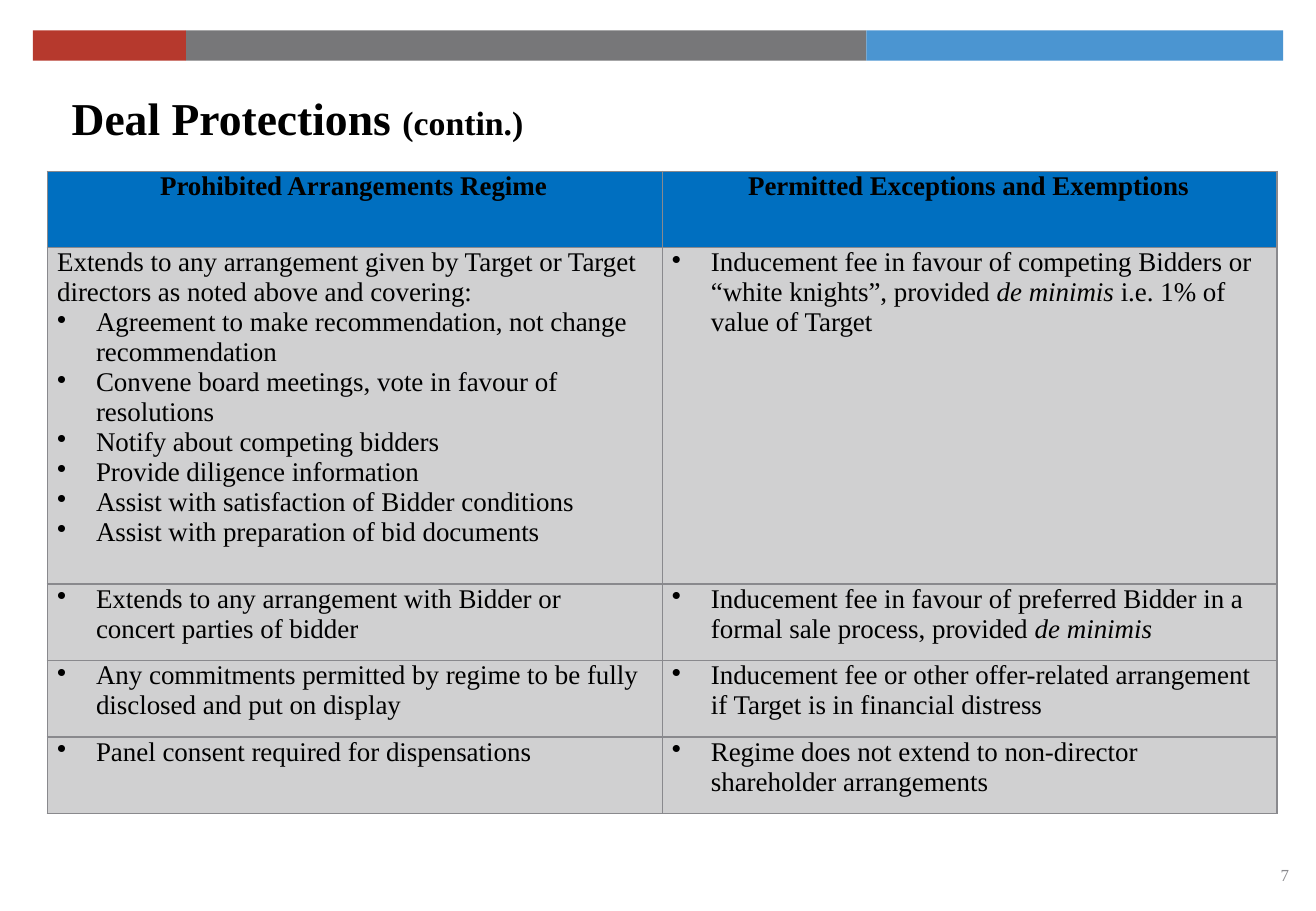
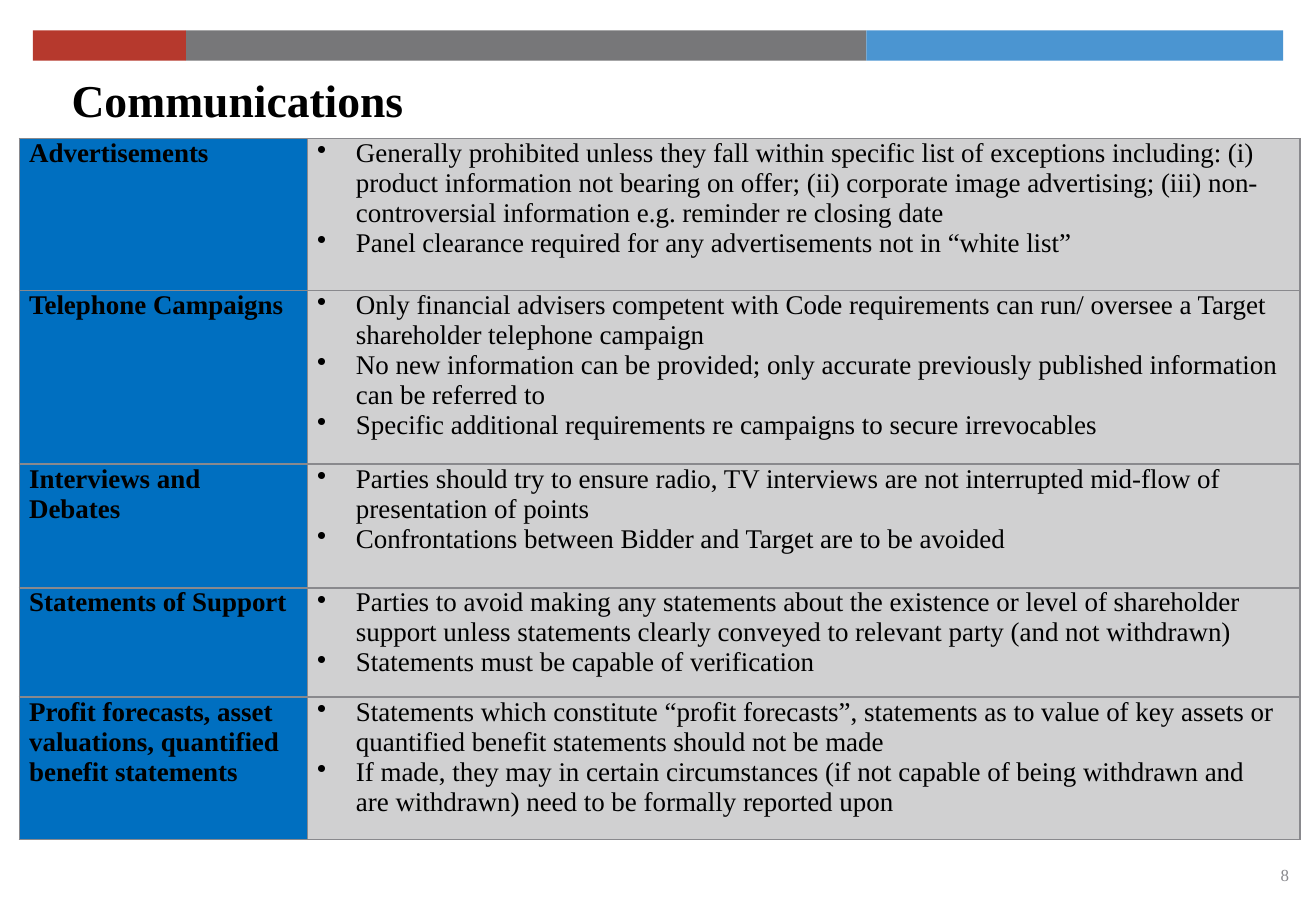
"""Two slides on takeover rules: deal protections and communications."""
from dataclasses import dataclass

from lxml.etree import SubElement
from pptx import Presentation
from pptx.dml.color import RGBColor
from pptx.enum.shapes import MSO_SHAPE
from pptx.enum.text import PP_ALIGN
from pptx.oxml.ns import qn
from pptx.util import Inches, Pt


@dataclass(frozen=True)
class Theme:
    font: str = "Times New Roman"
    ink: str = "000000"
    red: str = "B6392D"
    grey: str = "777779"
    sky: str = "4B95D1"
    heading_fill: str = "006FC0"
    body_fill: str = "D0D0D1"
    muted: str = "89898D"
    title_size: int = 27
    suffix_size: int = 20
    table_size: int = 16
    number_size: int = 10
    border_width: int = 1


THEME = Theme()
BANDS = [(1.53, 5.6, THEME.grey), (7.13, 3.43, THEME.sky), (0.27, 1.26, THEME.red)]
TITLE_TEXT_LEFT = 0.59
BULLET = "• "

SLIDES = [
    {
        "number": 7,
        "title": [("Deal Protections ", THEME.title_size), ("(contin.)", THEME.suffix_size)],
        "title_box": (0.48, 0.74, 9.88),
        "table_at": (0.39, 1.41),
        "columns": [5.06, 5.06],
        "heights": [0.63, 2.77, 0.63, 0.63, 0.63],
        "heading_row": True,
        "rows": [
            (["Prohibited Arrangements Regime"], ["Permitted Exceptions and Exemptions"]),
            (
                [
                    "Extends to any arrangement given by Target or Target directors as noted above and covering:",
                    "• Agreement to make recommendation, not change recommendation",
                    "• Convene board meetings, vote in favour of resolutions",
                    "• Notify about competing bidders",
                    "• Provide diligence information",
                    "• Assist with satisfaction of Bidder conditions",
                    "• Assist with preparation of bid documents",
                ],
                ["• Inducement fee in favour of competing Bidders or “white knights”, "
                 "provided *de minimis* i.e. 1% of value of Target"],
            ),
            (
                ["• Extends to any arrangement with Bidder or concert parties of bidder"],
                ["• Inducement fee in favour of preferred Bidder in a formal sale process, "
                 "provided *de minimis*"],
            ),
            (
                ["• Any commitments permitted by regime to be fully disclosed and put on display"],
                ["• Inducement fee or other offer-related arrangement if Target is in financial distress"],
            ),
            (
                ["• Panel consent required for dispensations"],
                ["• Regime does not extend to non-director shareholder arrangements"],
            ),
        ],
    },
    {
        "number": 8,
        "title": [("Communications", THEME.title_size)],
        "title_box": (0.58, 0.59, 2.76),
        "table_at": (0.16, 1.14),
        "columns": [2.37, 8.17],
        "heights": [1.25, 1.43, 1.02, 0.9, 1.17],
        "heading_row": False,
        "rows": [
            (
                ["Advertisements"],
                [
                    "• Generally prohibited unless they fall within specific list of exceptions including: "
                    "(i) product information not bearing on offer; (ii) corporate image advertising; "
                    "(iii) non-controversial information e.g. reminder re closing date",
                    "• Panel clearance required for any advertisements not in “white list”",
                ],
            ),
            (
                ["Telephone Campaigns"],
                [
                    "• Only financial advisers competent with Code requirements can run/ oversee "
                    "a Target shareholder telephone campaign",
                    "• No new information can be provided; only accurate previously published "
                    "information can be referred to",
                    "• Specific additional requirements re campaigns to secure irrevocables",
                ],
            ),
            (
                ["Interviews and Debates"],
                [
                    "• Parties should try to ensure radio, TV interviews are not interrupted "
                    "mid-flow of presentation of points",
                    "• Confrontations between Bidder and Target are to be avoided",
                ],
            ),
            (
                ["Statements of Support"],
                [
                    "• Parties to avoid making any statements about the existence or level of shareholder "
                    "support unless statements clearly conveyed to relevant party (and not withdrawn)",
                    "• Statements must be capable of verification",
                ],
            ),
            (
                ["Profit forecasts, asset valuations, quantified benefit statements"],
                [
                    "• Statements which constitute “profit forecasts”, statements as to value of key assets "
                    "or quantified benefit statements should not be made",
                    "• If made, they may in certain circumstances (if not capable of being withdrawn and "
                    "are withdrawn) need to be formally reported upon",
                ],
            ),
        ],
    },
]


def style_paragraph(paragraph, size=None, color=THEME.ink, bold=False):
    """Set the font shared by all runs of a paragraph."""
    font = paragraph.font
    font.name = THEME.font
    font.bold = bold
    font.color.rgb = RGBColor.from_string(color)
    if size:
        font.size = Pt(size)


def add_text_frame(slide, left, top, width, height, inset):
    """Add a wrapping text box with only a left inset and return its frame."""
    frame = slide.shapes.add_textbox(
        Inches(left), Inches(top), Inches(width), Inches(height)).text_frame
    frame.word_wrap = True
    frame.margin_top = frame.margin_right = frame.margin_bottom = 0
    frame.margin_left = Inches(inset)
    return frame


deck = Presentation()
deck.slide_width, deck.slide_height = Inches(10.83), Inches(7.5)

for content in SLIDES:
    slide = deck.slides.add_slide(deck.slide_layouts[6])

    for left, width, color in BANDS:
        band = slide.shapes.add_shape(
            MSO_SHAPE.RECTANGLE, Inches(left), Inches(0.25), Inches(width), Inches(0.25))
        band.shadow.inherit = False
        band.fill.solid()
        band.fill.fore_color.rgb = RGBColor.from_string(color)
        band.line.fill.background()

    left, top, width = content["title_box"]
    title = add_text_frame(slide, left, top, width, 0.46, TITLE_TEXT_LEFT - left).paragraphs[0]
    style_paragraph(title, bold=True)
    for text, size in content["title"]:
        part = title.add_run()
        part.text = text
        part.font.size = Pt(size)

    page_number = add_text_frame(slide, 10.51, 7.12, 0.24, 0.19, 0.03).paragraphs[0]
    page_number.text = str(content["number"])
    style_paragraph(page_number, THEME.number_size, THEME.muted)

    columns, heights = content["columns"], content["heights"]
    left, top = content["table_at"]
    rules = slide.shapes.add_table(
        len(heights), len(columns), Inches(left), Inches(top),
        Inches(sum(columns)), Inches(sum(heights))).table
    rules.first_row = rules.horz_banding = False
    for column, width in zip(rules.columns, columns):
        column.width = Inches(width)
    for row, height in zip(rules.rows, heights):
        row.height = Inches(height)

    for row_index, row_content in enumerate(content["rows"]):
        for column_index, lines in enumerate(row_content):
            cell = rules.cell(row_index, column_index)
            heading = (row_index if content["heading_row"] else column_index) == 0
            cell.margin_left = Inches(0.08)
            cell.margin_right = Inches(0.1 if heading else 0.15)
            cell.margin_top = cell.margin_bottom = 0

            properties = cell._tc.get_or_add_tcPr()
            for side in ("a:lnL", "a:lnR", "a:lnT", "a:lnB"):
                border = SubElement(properties, qn(side), w=str(Pt(THEME.border_width)))
                SubElement(SubElement(border, qn("a:solidFill")), qn("a:srgbClr"), val=THEME.muted)
            cell.fill.solid()
            cell.fill.fore_color.rgb = RGBColor.from_string(
                THEME.heading_fill if heading else THEME.body_fill)

            for line_index, line in enumerate(lines):
                frame = cell.text_frame
                paragraph = frame.add_paragraph() if line_index else frame.paragraphs[0]
                if heading and content["heading_row"]:
                    paragraph.alignment = PP_ALIGN.CENTER
                if line.startswith(BULLET):
                    layout = paragraph._p.get_or_add_pPr()
                    layout.set("marL", str(Inches(0.32)))
                    layout.set("indent", str(Inches(-0.32)))
                    SubElement(SubElement(layout, qn("a:buClr")), qn("a:srgbClr"), val=THEME.ink)
                    SubElement(layout, qn("a:buChar"), char=BULLET.strip())
                style_paragraph(paragraph, THEME.table_size, bold=heading)
                for phrase_index, phrase in enumerate(line.removeprefix(BULLET).split("*")):
                    if phrase:
                        run = paragraph.add_run()
                        run.text = phrase
                        if phrase_index % 2:
                            run.font.italic = True

deck.save("out.pptx")
